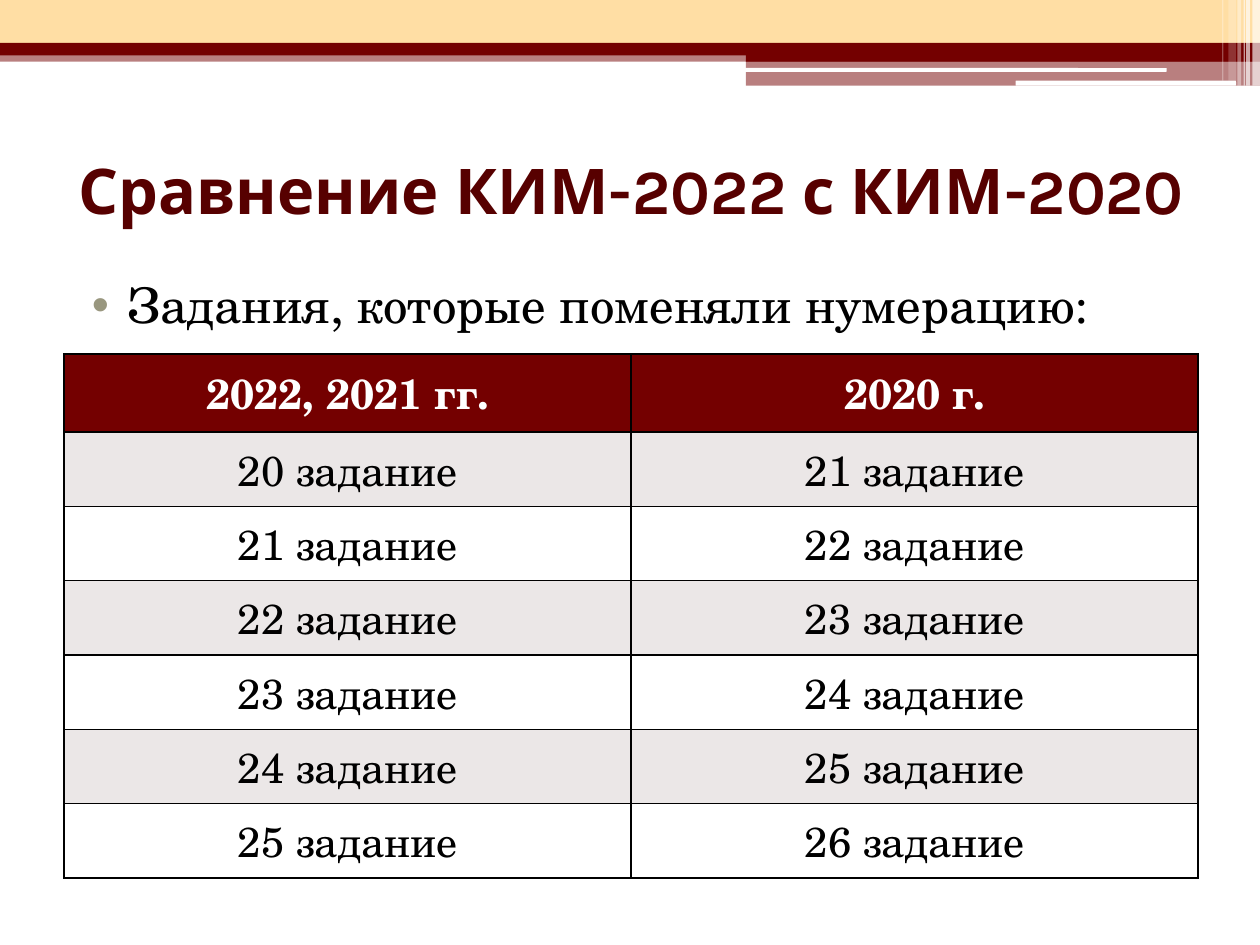
from lxml.etree import SubElement as Sub
from pptx import Presentation
from pptx.dml.color import RGBColor as RGB
from pptx.enum.shapes import MSO_SHAPE as Shape
from pptx.enum.text import MSO_ANCHOR as Anchor, MSO_AUTO_SIZE as Fit, PP_ALIGN as Align
from pptx.oxml.ns import qn
from pptx.util import Inches, Pt

RED = RGB(0x74, 0x00, 0x00)
DARK = RGB(0x57, 0x00, 0x00)
SAND = RGB(0xFF, 0xDE, 0xA4)
GRAY = RGB(0xEB, 0xE7, 0xE7)
OLIVE = RGB(0x99, 0x97, 0x8F - 0x10)
BLACK = RGB(0x00, 0x00, 0x00)
WHITE = RGB(0xFF, 0xFF, 0xFF)
HEAD_FONT = "Karla"
TEXT_FONT = "TeX Gyre Schola"

BARS = [
    (0, 0.4, 10, 0.09, RED, 50),
    (0, 0, 10, 0.34, SAND, 100),
    (0, 0.34, 10, 0.1, RED, 100),
    (5.92, 0.39, 4.08, 0.1, RED, 100),
    (5.92, 0.48, 4.08, 0.2, RED, 50),
]
PILLS = [(5.91, 0.54, 3.35, 0.03), (8.06, 0.64, 1.75, 0.04)]
STRIPES = [
    (9.94, 0.06, 0.68, 65),
    (9.89, 0.03, 0.68, 65),
    (9.87, 0.01, 0.68, 60),
    (9.82, 0.03, 0.68, 40),
    (9.75, 0.06, 0.64, 20),
    (9.7, 0.01, 0.64, 30),
]


def add_run(para, text, font, size, color, bold=False):
    run = para.add_run()
    run.text = text
    run.font.name = font
    run.font.size = Pt(size)
    run.font.bold = bold
    run.font.color.rgb = color


def add_bar(slide, kind, box, color, alpha=100):
    bar = slide.shapes.add_shape(kind, *map(Inches, box))
    bar.shadow.inherit = False
    bar.line.fill.background()
    bar.fill.solid()
    bar.fill.fore_color.rgb = color
    if alpha < 100:
        tint = bar.fill._xPr.find(".//" + qn("a:srgbClr"))
        Sub(tint, qn("a:alpha"), val=str(alpha * 1000))
    return bar


def add_band(slide, left, top):
    for x, y, w, h, color, alpha in BARS:
        add_bar(slide, Shape.RECTANGLE, (left + x, top + y, w, h), color, alpha)
    for x, y, w, h in PILLS:
        add_bar(slide, Shape.ROUNDED_RECTANGLE, (left + x, top + y, w, h), WHITE)
    for x, w, h, alpha in STRIPES:
        add_bar(slide, Shape.RECTANGLE, (left + x, top, w, h), WHITE, alpha)


def place(holder, box, anchor):
    holder.left, holder.top, holder.width, holder.height = map(Inches, box)
    frame = holder.text_frame
    frame.word_wrap = True
    frame.auto_size = Fit.NONE
    frame.vertical_anchor = anchor
    return frame.paragraphs[0]


def set_title(slide, box, text):
    para = place(slide.shapes.title, box, Anchor.MIDDLE)
    para.alignment = Align.CENTER
    add_run(para, text, HEAD_FONT, 36, DARK, True)


def set_body(slide, box, text):
    para = place(slide.placeholders[1], box, Anchor.TOP)
    para.alignment = Align.JUSTIFY
    para.space_before = Pt(3)
    props = para._p.get_or_add_pPr()
    props.set("marL", str(Inches(0.4)))
    props.set("indent", str(Inches(-0.28)))
    Sub(Sub(props, qn("a:buClr")), qn("a:srgbClr"), val=str(OLIVE))
    Sub(props, qn("a:buFont"), typeface="Arial")
    Sub(props, qn("a:buChar"), char="•")
    add_run(para, text, TEXT_FONT, 28, BLACK)


def set_cell(cell, text, fill, color, bold):
    props = cell._tc.get_or_add_tcPr()
    for side in ("lnL", "lnR", "lnT", "lnB"):
        line = Sub(props, qn("a:" + side), w=str(Pt(1)))
        Sub(Sub(line, qn("a:solidFill")), qn("a:srgbClr"), val=str(BLACK))
    cell.fill.solid()
    cell.fill.fore_color.rgb = fill
    cell.vertical_anchor = Anchor.MIDDLE
    para = cell.text_frame.paragraphs[0]
    para.alignment = Align.CENTER
    add_run(para, text, TEXT_FONT, 24, color, bold)


def add_grid(slide, box, rows):
    grid = slide.shapes.add_table(len(rows), len(rows[0]), *map(Inches, box)).table
    for r, row in enumerate(rows):
        head = r == 0
        grid.rows[r].height = Inches(0.62 if head else 0.59)
        fill = RED if head else GRAY if r % 2 else WHITE
        for c, text in enumerate(row):
            set_cell(grid.cell(r, c), text, fill, WHITE if head else BLACK, head)


def main():
    deck = Presentation()
    deck.slide_width, deck.slide_height = Inches(10), Inches(7.5)
    slide = deck.slides.add_slide(deck.slide_layouts[1])
    add_band(slide, 0, 0)
    set_title(slide, (0.51, 0.92, 9, 1.17), "Сравнение КИМ-2022 с КИМ-2020")
    set_body(slide, (0.51, 2.13, 9, 4.73), "Задания, которые поменяли нумерацию:")
    rows = [("2022, 2021 гг.", "2020 г.")]
    rows += [(f"{n} задание", f"{n + 1} задание") for n in range(20, 26)]
    add_grid(slide, (0.51, 2.81, 9, 4.16), rows)
    deck.save("out.pptx")


if __name__ == "__main__":
    main()
